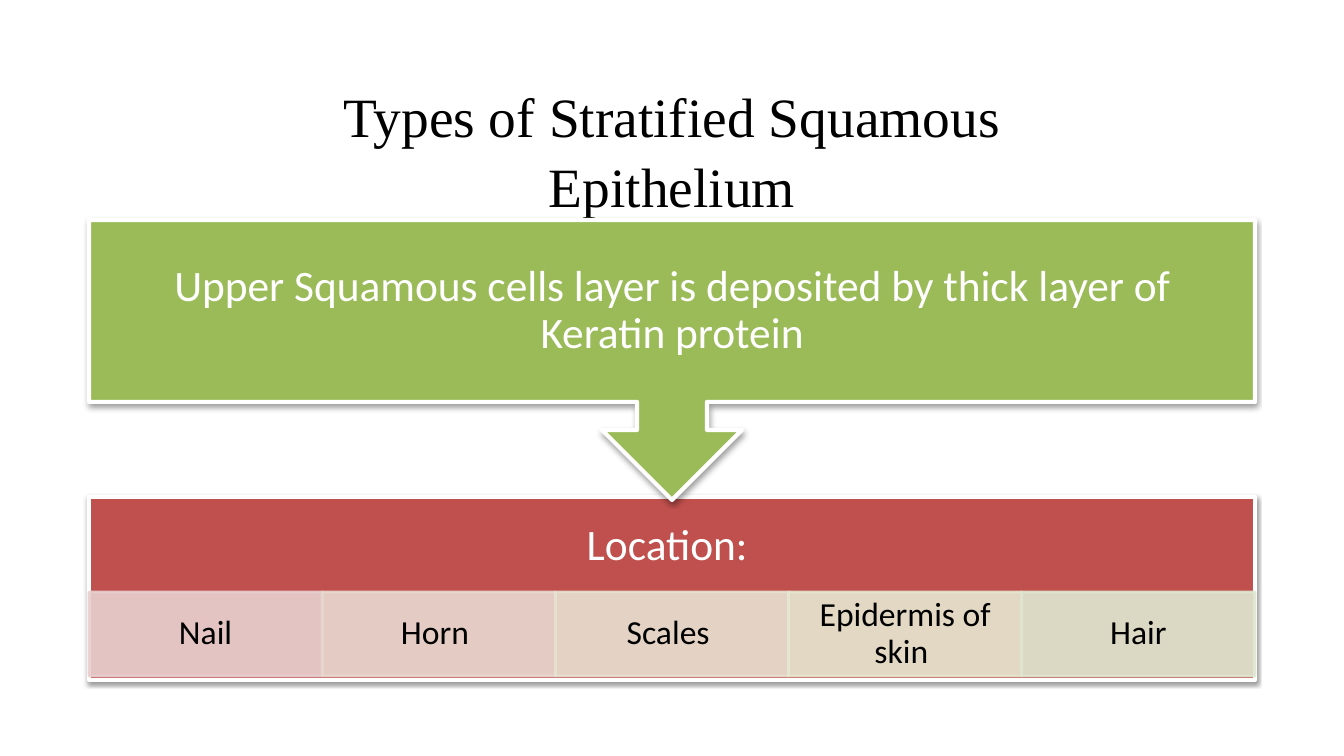
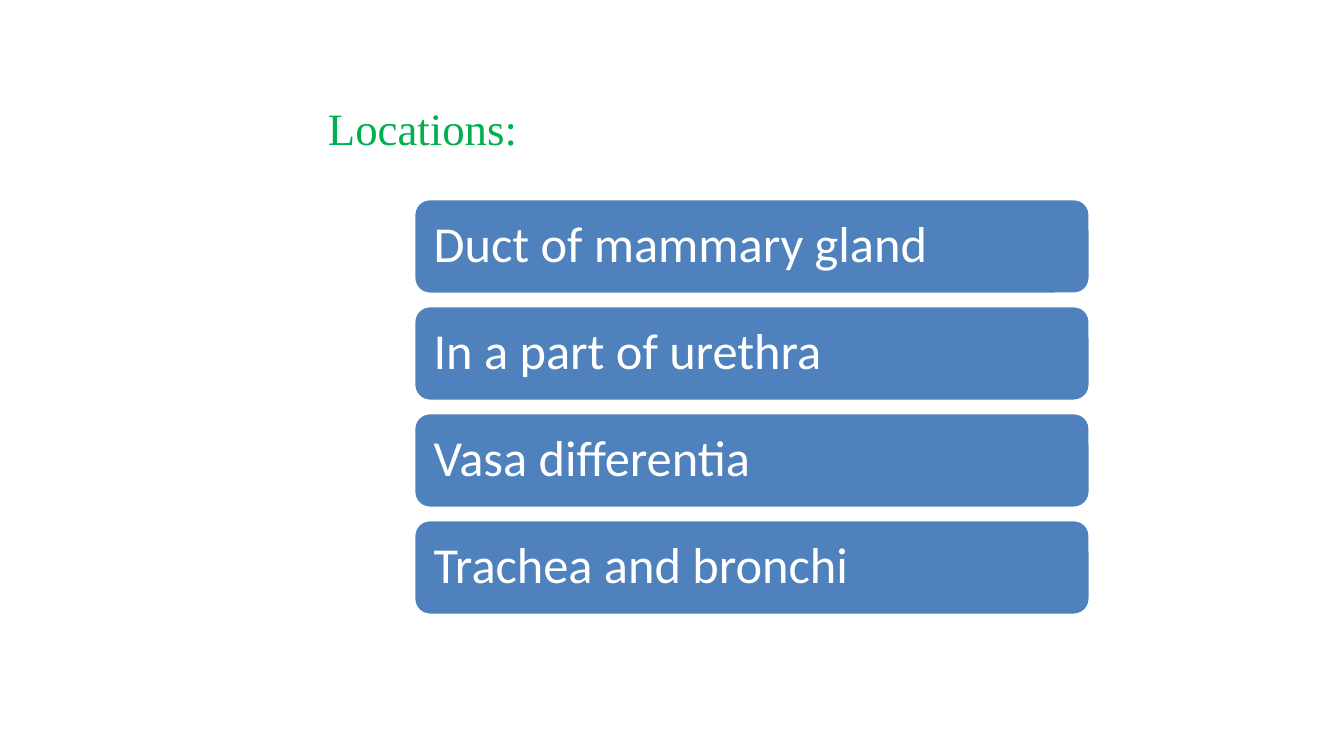
import pptx
import pptx.util
import pptx.dml.color
import pptx.enum.shapes
import pptx.enum.text
import pptx.oxml
import pptx.oxml.ns

# Content
HEAD = "Types of Stratified Squamous Epithelium"
CAUSE = "Upper Squamous cells layer is deposited by thick layer of Keratin protein"
PLACE = "Location: "
SITES = [  # label, tint
    ("Nail", "E8D0D0"),
    ("Horn ", "E8D9D0"),
    ("Scales ", "E8E1D1"),
    ("Epidermis of skin ", "E6E7D1"),
    ("Hair", "DEE7D1"),
]
LIST_HEAD = "Locations:"
PARTS = ["Duct of mammary gland", "In a part of urethra",
         "Vasa differentia", "Trachea and bronchi"]


class Theme:
    serif, sans = "Times New Roman", "Calibri"
    black, white = "000000", "FFFFFF"
    green, red, blue, leaf = "9BBB59", "C0504D", "4F81BD", "00B050"
    head, sub, lead, cell, bar = 39.6, 32, 31, 24, 36
    tight = 0.9  # line spacing inside shapes


SHAPE = pptx.enum.shapes.MSO_SHAPE
ALIGN = pptx.enum.text.PP_ALIGN
ANCHOR = pptx.enum.text.MSO_ANCHOR
SCALE = 12192000 / 1344  # EMU in one px
SHADOW = (
    '<a:outerShdw %s blurRad="40000" dist="20000" dir="5400000" rotWithShape="0">'
    '<a:srgbClr val="000000"><a:alpha val="38000"/></a:srgbClr></a:outerShdw>'
    % pptx.oxml.ns.nsdecls("a"))
ALPHA = '<a:alpha %s val="90000"/>' % pptx.oxml.ns.nsdecls("a")


def px(num):
    return pptx.util.Emu(round(num * SCALE))


def rgb(code):
    return pptx.dml.color.RGBColor.from_string(code)


def write(shape, text, size, color=Theme.white, font=Theme.sans,
          align=ALIGN.CENTER, anchor=ANCHOR.MIDDLE, pad=(24, 24),
          space=Theme.tight):
    """Fill a shape with one formatted paragraph; pad is (side, top)."""
    frame = shape.text_frame
    frame.word_wrap = True
    frame.auto_size = pptx.enum.text.MSO_AUTO_SIZE.NONE
    frame.vertical_anchor = anchor
    frame.margin_left = frame.margin_right = px(pad[0])
    frame.margin_top = frame.margin_bottom = px(pad[1])
    para = frame.paragraphs[0]
    para.alignment, para.line_spacing = align, space
    run = para.add_run()
    run.text = text
    run.font.name, run.font.size = font, pptx.util.Pt(size)
    run.font.color.rgb = rgb(color)


def draw(slide, kind, box, fill, line=Theme.white, width=3,
         shadow=False, clear=False):
    """Add a preset shape, with an optional shadow or slight transparency."""
    shape = slide.shapes.add_shape(kind, *map(px, box))
    shape.fill.solid()
    shape.fill.fore_color.rgb = rgb(fill)
    shape.line.color.rgb = rgb(line)
    shape.line.width = pptx.util.Pt(width)
    shape.shadow.inherit = False
    props = shape._element.spPr
    if clear:
        for color in props.iter(pptx.oxml.ns.qn("a:srgbClr")):
            color.append(pptx.oxml.parse_xml(ALPHA))
    if shadow:
        effects = props.find(pptx.oxml.ns.qn("a:effectLst"))
        effects.append(pptx.oxml.parse_xml(SHADOW))
    return shape


def start(deck, text, box, size, **style):
    """Add a title-only slide and place its title."""
    slide = deck.slides.add_slide(deck.slide_layouts[5])
    title = slide.shapes.title
    title.left, title.top, title.width, title.height = map(px, box)
    write(title, text, size, font=Theme.serif, **style)
    return slide


def types(deck):
    slide = start(deck, HEAD, (194, 91, 956, 116), Theme.head,
                  color=Theme.black, pad=(25, 25), space=1.05)
    left, wide = 89, 1166

    # Location panel and its heading
    top = 497
    draw(slide, SHAPE.RECTANGLE, (left, top, wide, 183), Theme.red, shadow=True)
    label = slide.shapes.add_textbox(*map(px, (left, top, wide, 99)))
    write(label, PLACE, Theme.lead)

    # Row of sites
    step = wide / len(SITES)
    for col, (name, tint) in enumerate(SITES):
        cell = draw(slide, SHAPE.RECTANGLE, (left + col * step, 592, step, 84),
                    tint, line=tint, width=2, clear=True)
        write(cell, name, Theme.cell, color=Theme.black, pad=(19, 3))

    # Callout that points down to the panel
    call = draw(slide, SHAPE.DOWN_ARROW_CALLOUT, (left, 220, wide, 280),
                Theme.green, shadow=True)
    write(call, CAUSE, Theme.lead)


def places(deck):
    slide = start(deck, LIST_HEAD, (318, 96, 686, 136), Theme.sub,
                  color=Theme.leaf, align=ALIGN.LEFT, anchor=ANCHOR.TOP,
                  pad=(10, 5), space=1.0)

    # Stack of bars
    high, gap = 95, 12
    for row, name in enumerate(PARTS):
        bar = draw(slide, SHAPE.ROUNDED_RECTANGLE,
                   (414, 199 + row * (high + gap), 676, high),
                   Theme.blue, width=2)
        write(bar, name, Theme.bar, align=ALIGN.LEFT, pad=(15, 15))


def main():
    deck = pptx.Presentation()
    deck.slide_width, deck.slide_height = px(1344), px(756)
    types(deck)
    places(deck)
    deck.save("out.pptx")


if __name__ == "__main__":
    main()
